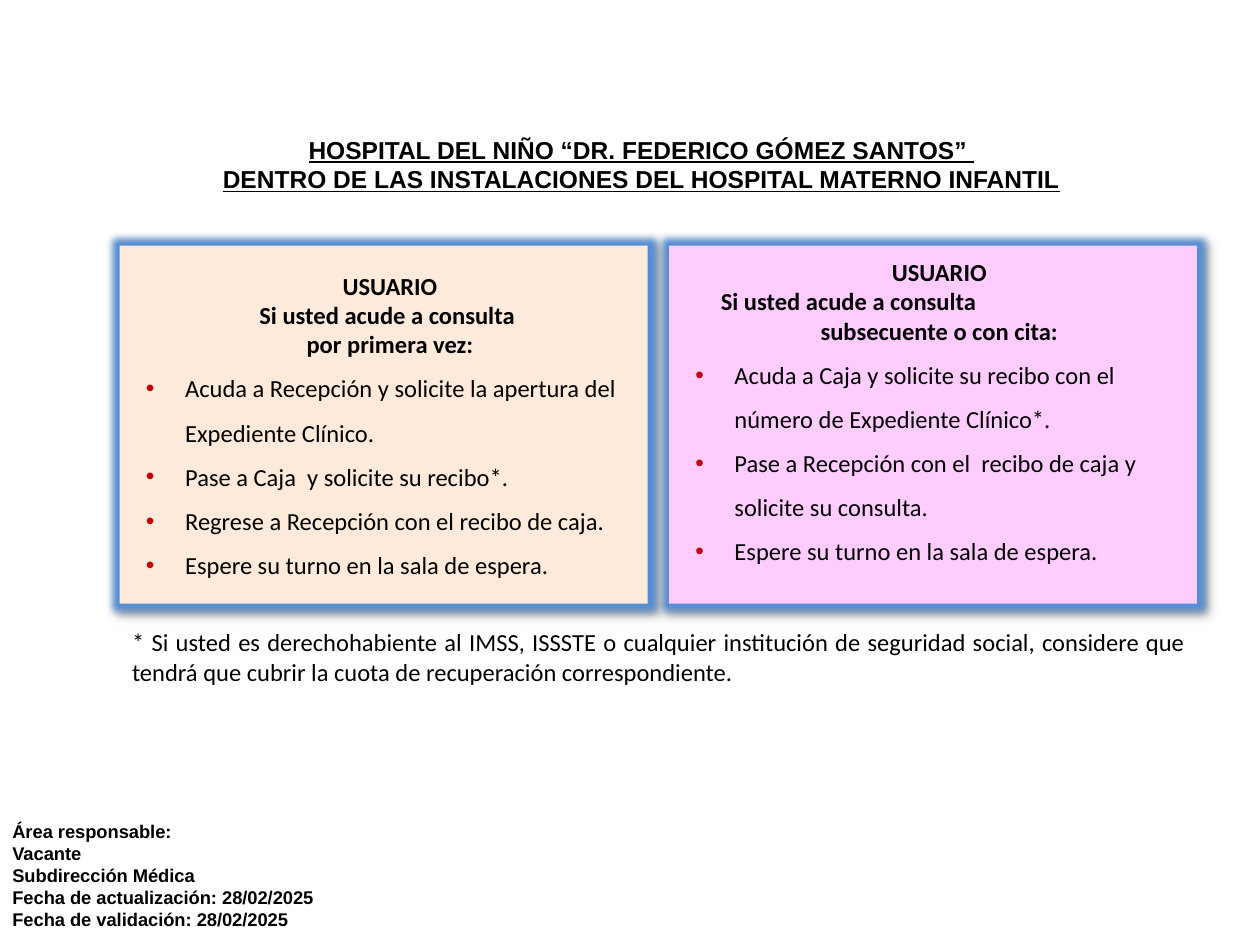
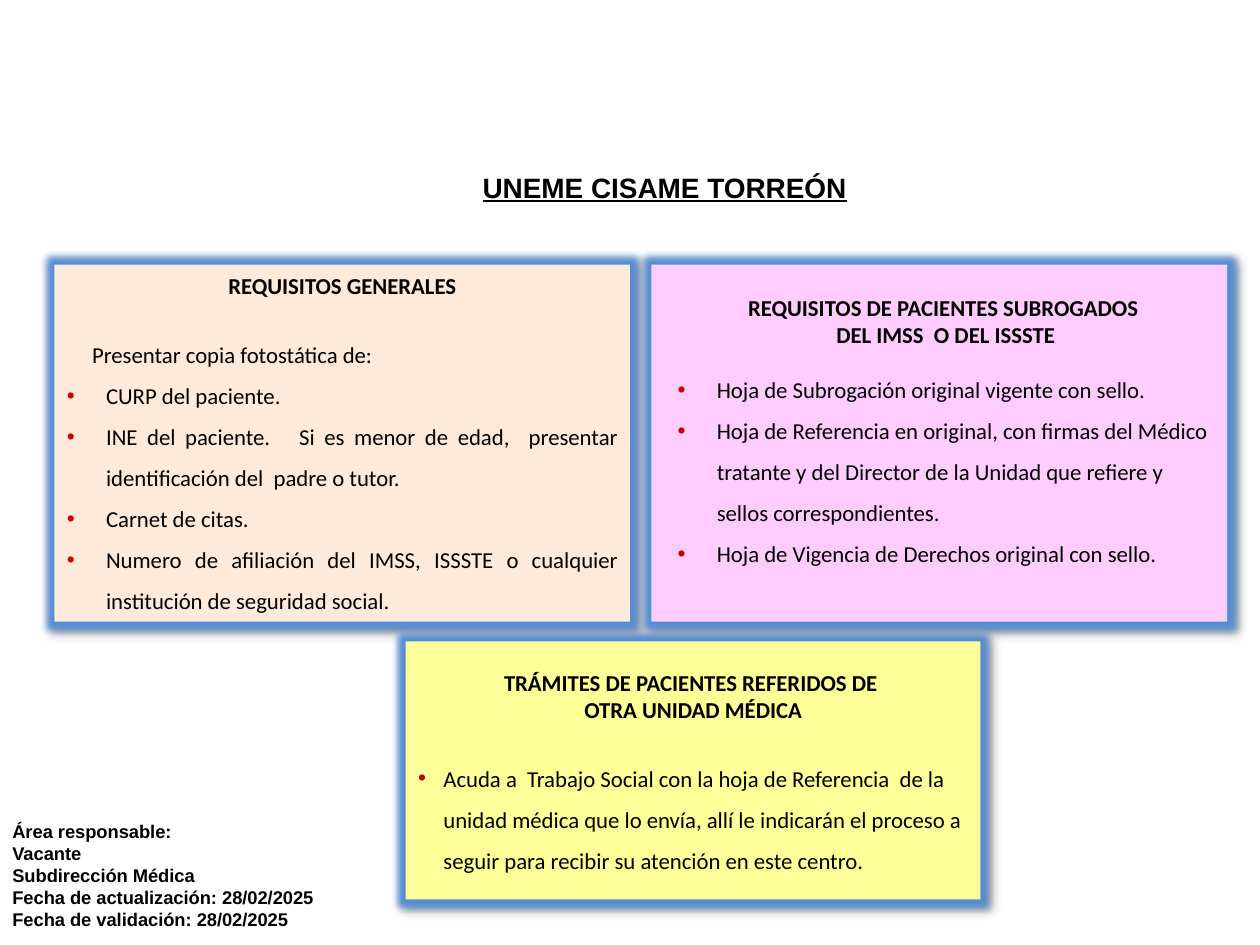
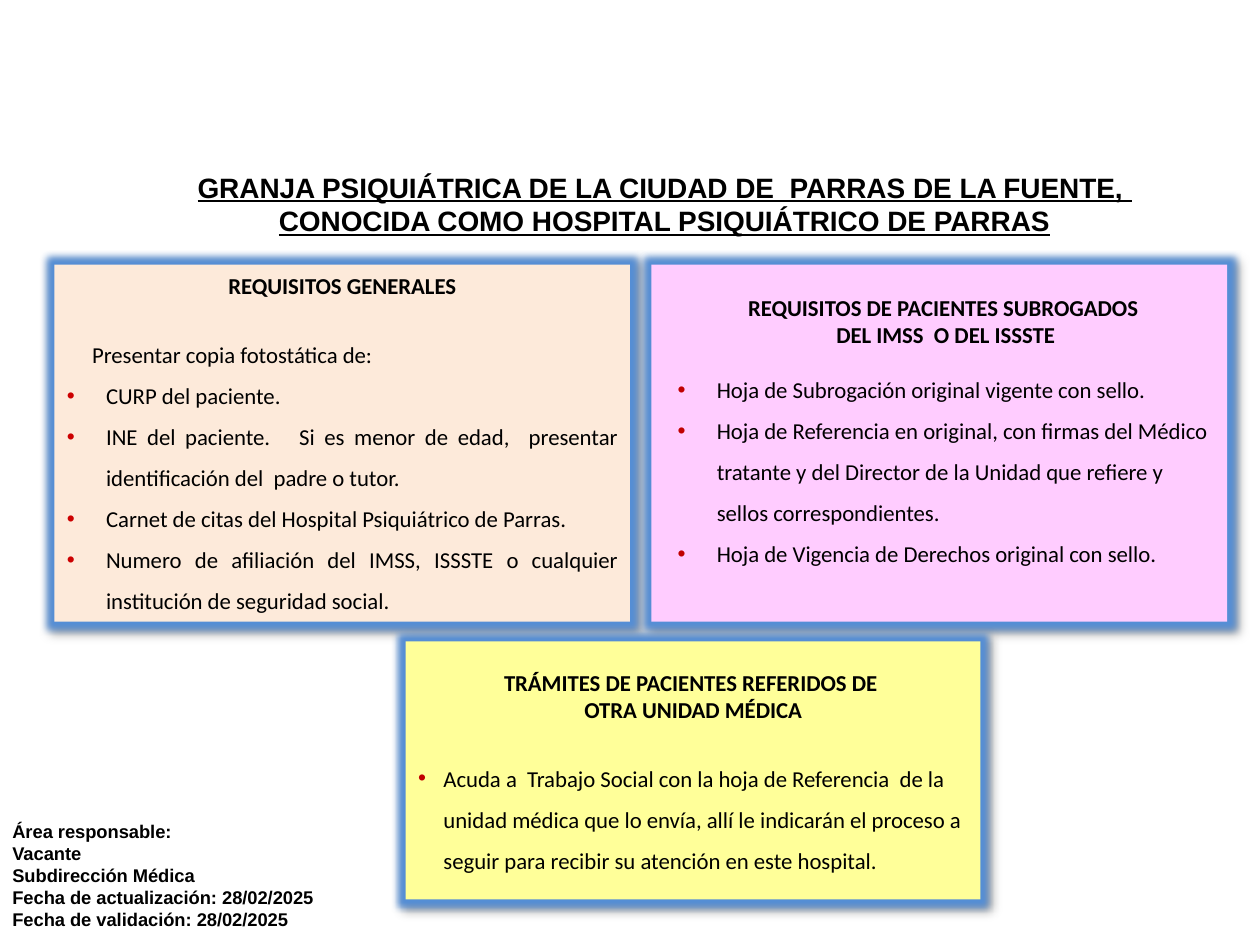
from lxml import etree
from pptx import Presentation
from pptx.dml.color import RGBColor
from pptx.enum import text
from pptx.oxml import ns
from pptx.util import Pt

ALIGN = text.PP_ALIGN
BLACK, RED, BRIGHT_RED = "000000", "C00000", "CC0000"
PEACH, PINK, YELLOW, GLOW = "FDEADA", "FFCCFF", "FFFF99", "558ED5"
LINE_GAP = 15.9

FOOTER = [
    "Área responsable:",
    "Vacante",
    "Subdirección Médica",
    "Fecha de actualización: 28/02/2025",
    "Fecha de validación: 28/02/2025",
]


def color(value):
    return RGBColor.from_string(value)


def apply(target, values):
    for name, value in values.items():
        setattr(target, name, value)


def add_element(parent, tag, **attributes):
    element = etree.SubElement(parent, ns.qn(tag))
    for name, value in attributes.items():
        element.set(name, str(value))
    return element


def heading(line, left=0):
    return line, {"left": left}, {"bold": True}


def plain(line, left, **layout):
    return line, {"left": left, **layout}, {}


def bullet(line, left=30.2, hang=22.4, mark=RED, **layout):
    values = {"alignment": ALIGN.LEFT, "line_spacing": 1.5, **layout}
    return line, {"left": left, "hang": hang, "mark": mark, **values}, {}


class Deck:
    def __init__(self):
        self.presentation = Presentation()
        apply(self.presentation, {"slide_width": Pt(720), "slide_height": Pt(540)})
        self.layout = self.presentation.slide_layouts.get_by_name("Comparison")
        self.slide = None
        self.bodies = []

    def start(self):
        self.slide = self.presentation.slides.add_slide(self.layout)
        self.bodies = list(self.slide.placeholders)[1:]

    def finish(self):
        for body in self.bodies:
            body.element.getparent().remove(body.element)

    def place(self, shape, box):
        apply(shape, dict(zip(("left", "top", "width", "height"), map(Pt, box))))
        apply(shape.text_frame, {
            "word_wrap": True,
            "auto_size": text.MSO_AUTO_SIZE.NONE,
            "vertical_anchor": text.MSO_ANCHOR.TOP,
            "margin_left": Pt(7.2), "margin_right": Pt(7.2),
            "margin_top": Pt(3.6), "margin_bottom": Pt(3.6),
        })

    def add_lines(self, frame, items, font, alignment):
        for index, (line, layout, emphasis) in enumerate(items):
            paragraph = frame.add_paragraph() if index else frame.paragraphs[0]
            layout = dict(layout)
            left, hang = layout.pop("left", 0), layout.pop("hang", 0)
            mark = layout.pop("mark", None)
            before = Pt(layout.pop("before", 0))
            apply(paragraph, {"alignment": alignment, "line_spacing": 1.0,
                              "space_before": before, "space_after": Pt(0), **layout})
            properties = paragraph._p.get_or_add_pPr()
            properties.set("marL", str(Pt(left)))
            properties.set("indent", str(Pt(-hang)))
            if mark:
                tint = add_element(properties, "a:buClr")
                add_element(tint, "a:srgbClr", val=mark)
                add_element(properties, "a:buFont", typeface="Arial")
                add_element(properties, "a:buChar", char="•")
            else:
                add_element(properties, "a:buNone")
            run = paragraph.add_run()
            run.text = line
            apply(run.font, {"bold": False, "underline": False, **font, **emphasis})
            run.font.color.rgb = color(BLACK)

    def title(self, lines, box, size):
        shape = self.slide.shapes.title
        self.place(shape, box)
        font = {"name": "Arial", "size": Pt(size), "bold": True, "underline": True}
        self.add_lines(shape.text_frame, [plain(line, 0) for line in lines], font, ALIGN.CENTER)

    def panel(self, box, fill, items, size, inset):
        shape = self.bodies.pop(0)
        self.place(shape, box)
        shape.text_frame.margin_top = Pt(inset)
        shape.fill.solid()
        shape.fill.fore_color.rgb = color(fill)
        shape.line.fill.background()
        effects = add_element(shape.element.spPr, "a:effectLst")
        glow = add_element(effects, "a:glow", rad=Pt(8))
        add_element(glow, "a:srgbClr", val=GLOW)
        shadow = add_element(effects, "a:outerShdw", blurRad=Pt(4), dist=Pt(3),
                             dir=45 * 60000, algn="tl", rotWithShape=0)
        shade = add_element(shadow, "a:srgbClr", val=BLACK)
        add_element(shade, "a:alpha", val=40000)
        self.add_lines(shape.text_frame, items, {"name": "Calibri", "size": Pt(size)}, ALIGN.CENTER)

    def text_box(self, lines, box, font, alignment):
        shape = self.slide.shapes.add_textbox(0, 0, 0, 0)
        self.place(shape, box)
        self.add_lines(shape.text_frame, [plain(line, 0) for line in lines], font, alignment)
        return shape

    def shared_footer(self):
        font = {"name": "Arial", "size": Pt(10.5), "bold": True}
        shape = self.text_box(FOOTER, (0, 465.1, 266.4, 70.6), font, ALIGN.LEFT)
        self.layout.shapes.element.append(shape.element)


def hospital_slide(deck):
    deck.start()
    deck.shared_footer()
    deck.title(
        ["HOSPITAL DEL NIÑO “DR. FEDERICO GÓMEZ SANTOS” ",
         "DENTRO DE LAS INSTALACIONES DEL HOSPITAL MATERNO INFANTIL"],
        (82.8, 73.4, 567.4, 51.1), 14)
    first_visit = [
        heading("USUARIO", 7.2),
        heading("Si usted acude a consulta ", 7.2),
        heading("por primera vez:", 7.2),
        bullet("Acuda a Recepción y solicite la apertura del Expediente Clínico."),
        bullet("Pase a Caja  y solicite su recibo*."),
        bullet("Regrese a Recepción con el recibo de caja."),
        bullet("Espere su turno en la sala de espera."),
    ]
    next_visit = [
        heading("USUARIO", 7.2),
        ("Si usted acude a consulta", {"left": 22.4, "alignment": ALIGN.LEFT}, {"bold": True}),
        heading("subsecuente o con cita:", 7.2),
        bullet("Acuda a Caja y solicite su recibo con el número de Expediente Clínico*."),
        bullet("Pase a Recepción con el  recibo de caja y solicite su consulta."),
        bullet("Espere su turno en la sala de espera."),
    ]
    deck.panel((68.4, 140.4, 301.7, 204.5), PEACH, first_visit, 14, 14.2)
    deck.panel((382.3, 140.4, 301.7, 204.5), PINK, next_visit, 14, 6.5)
    deck.text_box(
        ["* Si usted es derechohabiente al IMSS, ISSSTE o cualquier institución de seguridad "
         "social, considere que tendrá que cubrir la cuota de recuperación correspondiente."],
        (68.4, 355, 616.3, 41), {"name": "Calibri", "size": Pt(14)}, ALIGN.JUSTIFY)
    deck.finish()


def requirements_slide(deck, title_lines, card, center):
    deck.start()
    deck.title(title_lines, (93.6, 93.6, 572.4, 46.1), 16)
    documents = [
        "CURP del paciente.",
        "INE del paciente.   Si es menor de edad,  presentar identificación del  padre o tutor.",
        card,
        "Numero de afiliación del IMSS, ISSSTE o cualquier institución de seguridad social. ",
    ]
    general = [
        heading("REQUISITOS GENERALES"),
        plain("Presentar copia fotostática de: ", 14.4, alignment=ALIGN.JUSTIFY,
              line_spacing=1.5, before=LINE_GAP),
        *[bullet(line, 22.4, 22.4, BRIGHT_RED, alignment=ALIGN.JUSTIFY) for line in documents],
    ]
    subrogated = [
        heading("REQUISITOS DE PACIENTES SUBROGADOS ", 7.2),
        heading("DEL IMSS  O DEL ISSSTE", 7.2),
        bullet("Hoja de Subrogación original vigente con sello.", line_spacing=1.0, before=LINE_GAP),
        bullet("Hoja de Referencia en original, con firmas del Médico tratante y del Director "
               "de la Unidad que refiere y  sellos correspondientes."),
        bullet("Hoja de Vigencia de Derechos original con sello."),
    ]
    referred = [
        heading("TRÁMITES DE PACIENTES REFERIDOS DE "),
        heading("OTRA UNIDAD MÉDICA"),
        bullet("Acuda a  Trabajo Social con la hoja de Referencia  de la unidad médica que lo "
               "envía, allí le indicarán el proceso a seguir para recibir su atención en este "
               f"{center}.", 14.4, 14.4, before=LINE_GAP),
    ]
    deck.panel((31, 151.2, 329, 204), PEACH, general, 13, 4.2)
    deck.panel((372.2, 151.2, 329, 204), PINK, subrogated, 13, 16.5)
    deck.panel((231.8, 366.5, 328.5, 147.5), YELLOW, referred, 13, 15.4)
    deck.finish()


def main():
    deck = Deck()
    hospital_slide(deck)
    requirements_slide(deck, ["UNEME CISAME TORREÓN"], "Carnet de citas.", "centro")
    requirements_slide(
        deck,
        ["GRANJA PSIQUIÁTRICA DE LA CIUDAD DE  PARRAS DE LA FUENTE, ",
         "CONOCIDA COMO HOSPITAL PSIQUIÁTRICO DE PARRAS"],
        "Carnet de citas del Hospital Psiquiátrico de Parras.", "hospital")
    deck.presentation.save("out.pptx")


if __name__ == "__main__":
    main()
